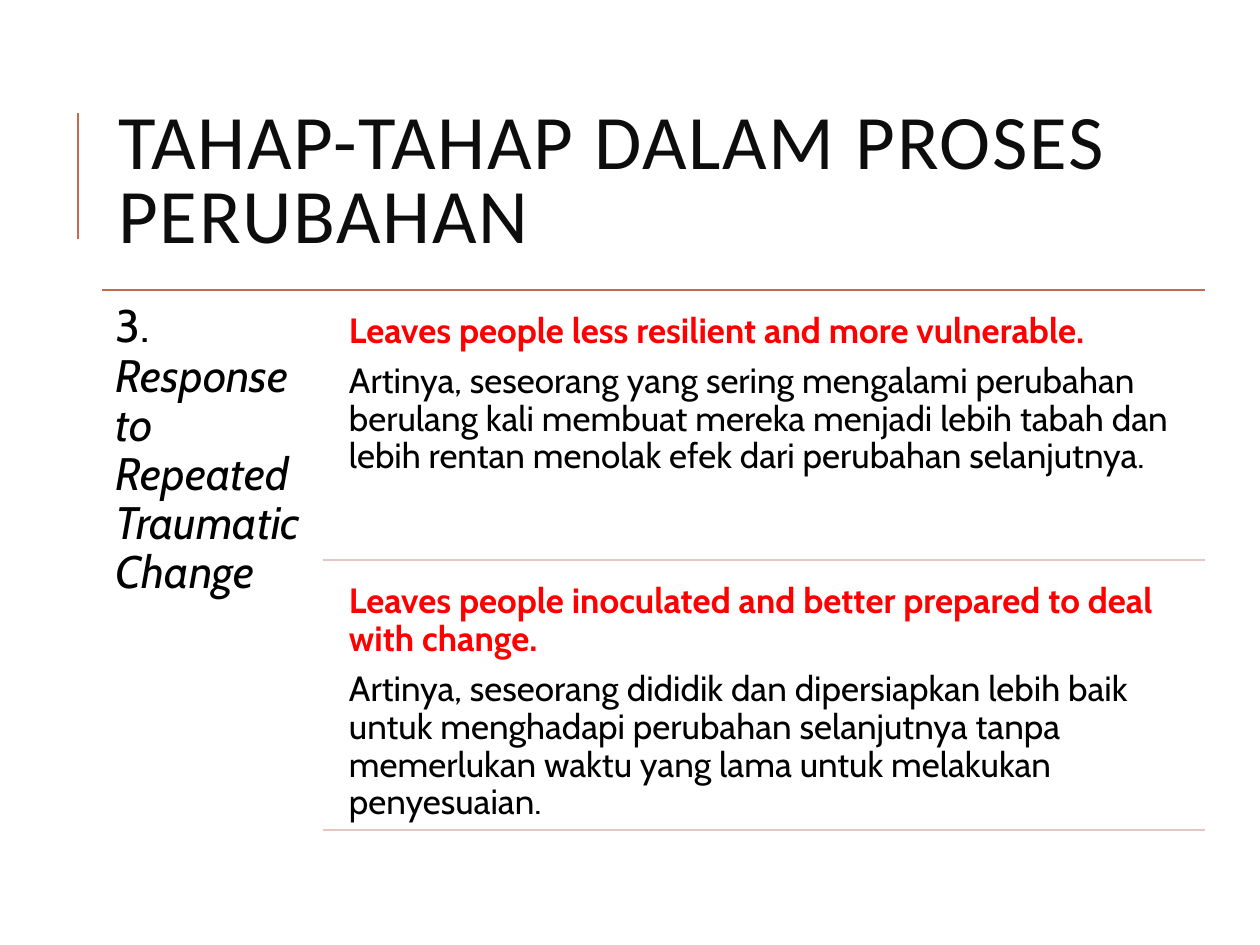
import pptx
import pptx.dml.color
import pptx.enum.shapes
import pptx.enum.text
import pptx.oxml.ns
import pptx.util
from lxml import etree

RGBColor = pptx.dml.color.RGBColor
INK = RGBColor(0x0D, 0x0D, 0x0D)
BLACK = RGBColor(0x00, 0x00, 0x00)
RED = RGBColor(0xFF, 0x00, 0x00)
RUST = RGBColor(0xC6, 0x69, 0x51)
BLUSH = RGBColor(0xE5, 0xC7, 0xC2)

# Horizontal and vertical positions are percentages of the slide's size.
LIST_LEFT, COLUMN_LEFT, LIST_RIGHT = 8.1, 25.6, 95.6
LIST_TOP, STEP = 30.67, 28.6
TEXT_LEFT, TEXT_DROP, TEXT_HEIGHT = 26.9, 1.4, 27.2

RESPONSES = [
    ("Leaves people less resilient and more vulnerable.",
     "Artinya, seseorang yang sering mengalami perubahan berulang kali membuat "
     "mereka menjadi lebih tabah dan lebih rentan menolak efek dari perubahan "
     "selanjutnya."),
    ("Leaves people inoculated and better prepared to deal with change.",
     "Artinya, seseorang dididik dan dipersiapkan lebih baik untuk menghadapi "
     "perubahan selanjutnya tanpa memerlukan waktu yang lama untuk melakukan "
     "penyesuaian."),
]


class SlideBuilder:
    heading_font = "Calibri"
    body_font = "Cabin"

    def __init__(self, deck):
        self.deck = deck
        self.page = deck.slides.add_slide(deck.slide_layouts[5])

    def x(self, percent):
        return round(self.deck.slide_width * percent / 100)

    def y(self, percent):
        return round(self.deck.slide_height * percent / 100)

    def title(self, text, left, top, width, height):
        box = self.page.shapes.title
        box.left, box.top = self.x(left), self.y(top)
        box.width, box.height = self.x(width), self.y(height)
        frame = box.text_frame
        frame.text = text
        frame.word_wrap = True
        frame.auto_size = pptx.enum.text.MSO_AUTO_SIZE.NONE
        frame.vertical_anchor = pptx.enum.text.MSO_ANCHOR.MIDDLE
        para = frame.paragraphs[0]
        para.alignment = pptx.enum.text.PP_ALIGN.LEFT
        para.line_spacing = 0.8
        span = para.runs[0]
        self.style(span.font, self.heading_font, 44, INK)
        span._r.get_or_add_rPr().set("spc", "100")

    def style(self, font, name, size, color, bold=False, italic=False):
        font.name, font.size = name, pptx.util.Pt(size)
        font.color.rgb = color
        font.bold, font.italic = bold, italic

    def line(self, start, end, color, weight):
        line = self.page.shapes.add_connector(
            pptx.enum.shapes.MSO_CONNECTOR.STRAIGHT,
            self.x(start[0]), self.y(start[1]), self.x(end[0]), self.y(end[1]))
        line.line.color.rgb = color
        line.line.width = pptx.util.Pt(weight)
        etree.SubElement(line._element.spPr, pptx.oxml.ns.qn("a:effectLst"))

    def text(self, area, paragraphs, size, inset):
        """Each paragraph is a list of (text, color, bold, italic) runs."""
        left, top, width, height = area
        box = self.page.shapes.add_textbox(
            self.x(left), self.y(top), self.x(width), self.y(height))
        frame = box.text_frame
        frame.word_wrap = True
        frame.margin_left = frame.margin_right = pptx.util.Inches(inset)
        frame.margin_top = frame.margin_bottom = pptx.util.Inches(inset)
        for index, spans in enumerate(paragraphs):
            para = frame.add_paragraph() if index else frame.paragraphs[0]
            para.line_spacing = 0.9
            para.space_after = pptx.util.Pt(size * 0.35)
            for words, color, bold, italic in spans:
                span = para.add_run()
                span.text = words
                self.style(span.font, self.body_font, size, color, bold, italic)


def main():
    deck = pptx.Presentation()
    deck.slide_width = pptx.util.Inches(10)
    deck.slide_height = pptx.util.Inches(7.5)
    slide = SlideBuilder(deck)

    slide.line((6.2, 25.33), (6.2, 12), RUST, 1.5)
    slide.title("TAHAP-TAHAP DALAM PROSES PERUBAHAN", 8.4, 8.53, 85.5, 21.87)

    slide.line((LIST_LEFT, LIST_TOP), (LIST_RIGHT, LIST_TOP), RUST, 1.25)
    slide.text((LIST_LEFT, LIST_TOP, COLUMN_LEFT - LIST_LEFT, 2 * STEP),
               [[("3. ", BLACK, False, False),
                 ("Response to Repeated Traumatic Change", BLACK, False, True)]],
               26, 0.11)

    for index, (claim, meaning) in enumerate(RESPONSES):
        top = LIST_TOP + index * STEP
        slide.text((TEXT_LEFT, top + TEXT_DROP, LIST_RIGHT - TEXT_LEFT, TEXT_HEIGHT),
                   [[(claim, RED, True, False)], [(meaning, BLACK, False, False)]],
                   20, 0.08)
        slide.line((COLUMN_LEFT, top + STEP), (LIST_RIGHT, top + STEP), BLUSH, 1.25)

    deck.save("out.pptx")


if __name__ == "__main__":
    main()
